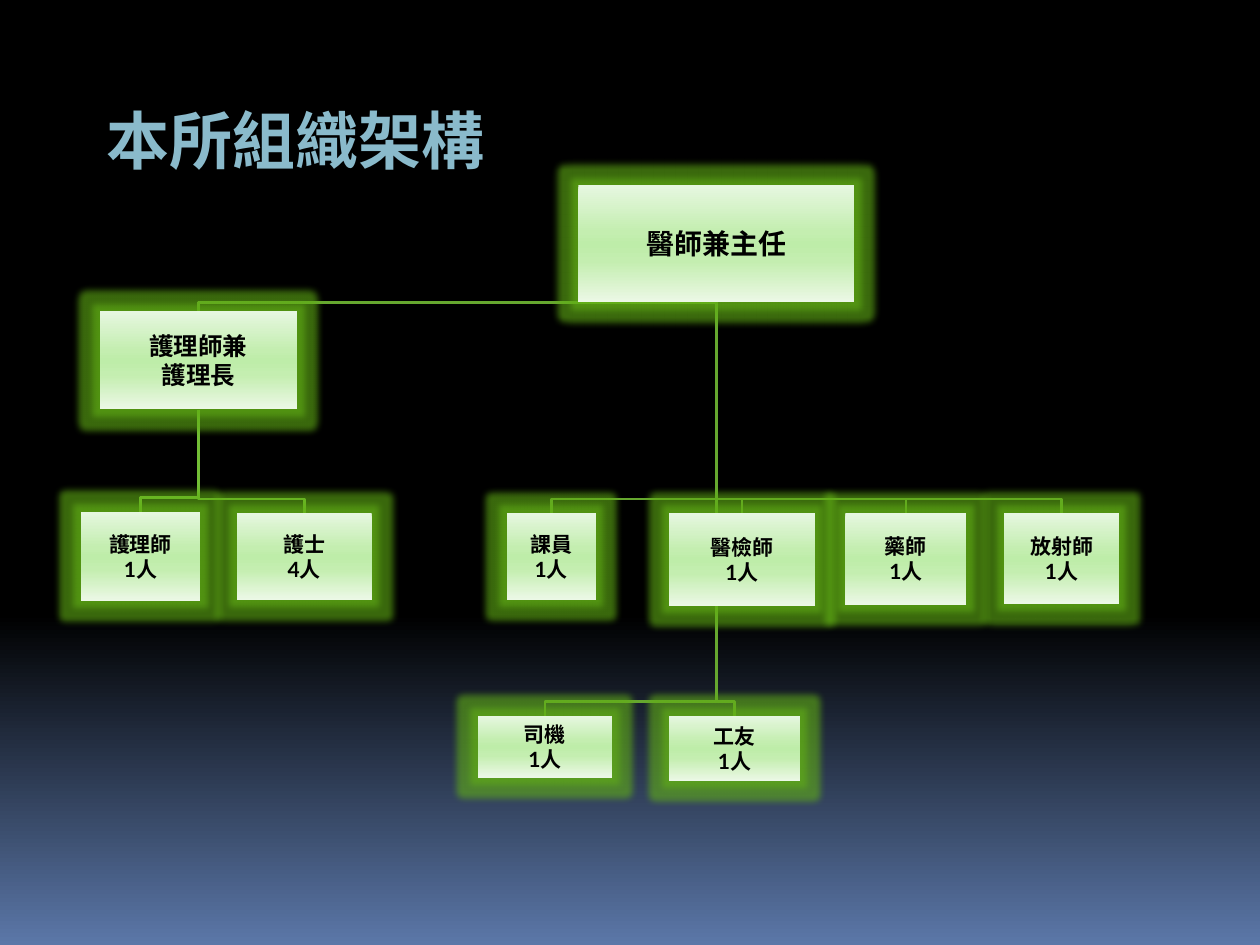
from lxml import etree
from pptx import Presentation
from pptx.dml.color import RGBColor
from pptx.enum.shapes import MSO_SHAPE
from pptx.enum.text import MSO_ANCHOR, PP_ALIGN
from pptx.oxml.ns import qn
from pptx.util import Inches, Pt

RECT = MSO_SHAPE.RECTANGLE
MIDDLE = MSO_ANCHOR.MIDDLE
CENTER = PP_ALIGN.CENTER
rgb = RGBColor.from_string

BOX_STOPS = [(0, "E6F7E0"), (40, "C4EEB0"), (50, "BEEDA9"), (65, "C4EEB0"), (100, "ECF8E6")]
BG_STOPS = [(0, "000000"), (65, "000000"), (100, "5B77A8")]
DARK_GREEN, GREEN = "66A72F", "73BE36"
ELBOW = 0.11  # height of the last leg above a box

# name: (left, top, width, height, text size, lines)
BOXES = {
    "director": (4.59, 1.47, 2.19, 0.93, 16, ["醫師兼主任"]),
    "head nurse": (0.79, 2.47, 1.57, 0.78, 14, ["護理師兼", "護理長"]),
    "nurse": (0.64, 4.06, 0.95, 0.71, 12, ["護理師", "1人"]),
    "junior nurse": (1.88, 4.07, 1.07, 0.69, 12, ["護士", "4人"]),
    "clerk": (4.02, 4.07, 0.71, 0.69, 12, ["課員", "1人"]),
    "driver": (3.79, 5.68, 1.07, 0.49, 12, ["司機", "1人"]),
    "janitor": (5.31, 5.68, 1.04, 0.52, 12, ["工友", "1人"]),
    "radiographer": (7.97, 4.07, 0.91, 0.72, 12, ["放射師", "1人"]),
    "lab technician": (5.31, 4.07, 1.16, 0.74, 12, ["醫檢師", "1人"]),
    "pharmacist": (6.71, 4.07, 0.96, 0.73, 12, ["藥師", "1人"]),
}
REPORTS = [
    ("director", DARK_GREEN, ["pharmacist", "lab technician", "radiographer", "janitor",
                              "driver", "clerk", "head nurse"]),
    ("head nurse", GREEN, ["junior nurse", "nurse"]),
]


def set_gradient(fill, element, stops):
    """Fill from top to bottom with any number of (percent, colour) stops."""
    fill.gradient()
    grad = element.find(".//" + qn("a:gradFill"))
    gs_list = grad.find(qn("a:gsLst"))
    for gs in list(gs_list):
        gs_list.remove(gs)
    for pos, color in stops:
        gs = etree.SubElement(gs_list, qn("a:gs"), pos=str(pos * 1000))
        etree.SubElement(gs, qn("a:srgbClr"), val=color)
    grad.find(qn("a:lin")).set("ang", "5400000")


def add_run(p, text, size, font, color):
    r = p.add_run()
    r.text = text
    r.font.size = Pt(size)
    r.font.name = font
    r.font.bold = True
    r.font.color.rgb = rgb(color)


prs = Presentation()
prs.slide_width, prs.slide_height = Inches(10), Inches(7.5)
s = prs.slides.add_slide(prs.slide_layouts[6])
set_gradient(s.background.fill, s.element, BG_STOPS)

# Title
sp = s.shapes.add_textbox(Inches(0.75), Inches(0.76), Inches(3.4), Inches(0.47))
sp.text_frame.word_wrap = True
add_run(sp.text_frame.paragraphs[0], "本所組織架構", 36, "Arial", "8ABACB")

# Elbow lines from the bottom of each superior to the top of each report
for parent, color, children in REPORTS:
    left, top, width, height = BOXES[parent][:4]
    x1, y1 = left + width / 2, top + height
    for child in children:
        left, top, width = BOXES[child][:3]
        x2, y2 = left + width / 2, top
        bend = max(y1, y2 - ELBOW)
        points = [(x1, bend), (x2, bend), (x2, y2)]
        fb = s.shapes.build_freeform(Inches(x1), Inches(y1))
        fb.add_line_segments([(Inches(x), Inches(y)) for x, y in points], close=False)
        sp = fb.convert_to_shape()
        sp.shadow.inherit = False
        sp.fill.background()
        sp.line.color.rgb = rgb(color)
        sp.line.width = Pt(1.5)

# Glowing boxes
for left, top, width, height, size, lines in BOXES.values():
    sp = s.shapes.add_shape(RECT, Inches(left), Inches(top), Inches(width), Inches(height))
    set_gradient(sp.fill, sp.element, BOX_STOPS)
    sp.line.fill.background()
    sp.shadow.inherit = False
    effects = sp.element.spPr.find(qn("a:effectLst"))
    glow = etree.SubElement(effects, qn("a:glow"), rad=str(Inches(0.11)))
    clr = etree.SubElement(glow, qn("a:srgbClr"), val="62B016")
    etree.SubElement(clr, qn("a:alpha"), val="60000")

    tf = sp.text_frame
    tf.word_wrap = True
    tf.vertical_anchor = MIDDLE
    tf.margin_left = tf.margin_right = tf.margin_top = tf.margin_bottom = Inches(0.01)
    for i, line in enumerate(lines):
        p = tf.add_paragraph() if i else tf.paragraphs[0]
        p.alignment = CENTER
        add_run(p, line, size, "Lato", "000000")

prs.save("out.pptx")
